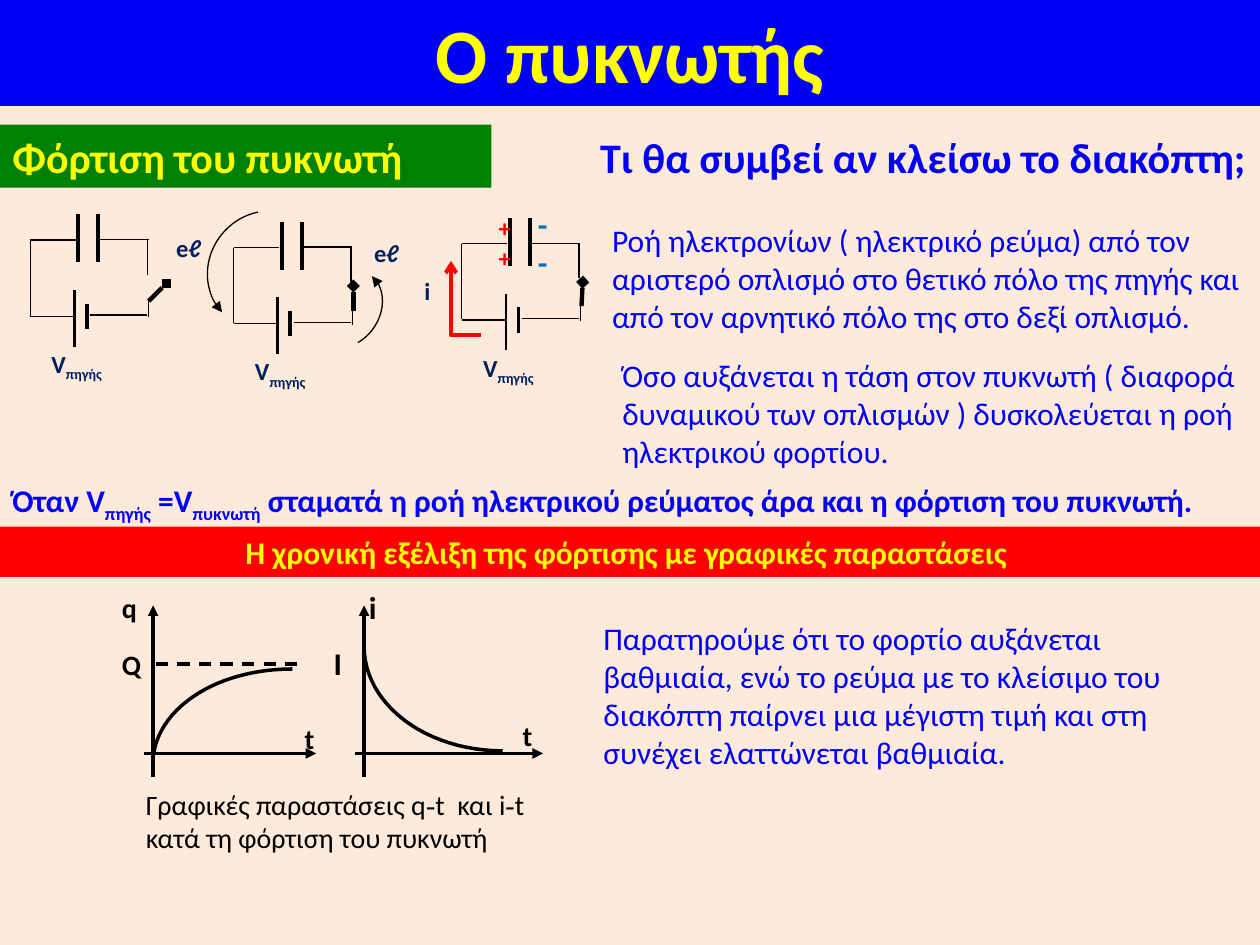
from lxml import etree
from pptx import Presentation
from pptx.dml.color import RGBColor
from pptx.enum.dml import MSO_LINE
from pptx.enum.shapes import MSO_CONNECTOR, MSO_SHAPE
from pptx.enum.text import MSO_ANCHOR, PP_ALIGN
from pptx.oxml.ns import qn
from pptx.util import Inches, Pt

DASH = MSO_LINE.DASH
STRAIGHT = MSO_CONNECTOR.STRAIGHT
RECTANGLE, ARC = MSO_SHAPE.RECTANGLE, MSO_SHAPE.ARC
TOP, MIDDLE = MSO_ANCHOR.TOP, MSO_ANCHOR.MIDDLE
LEFT, CENTER = PP_ALIGN.LEFT, PP_ALIGN.CENTER

BLUE, GREEN, RED, YELLOW = "0000FB", "008000", "FF0000", "FFFF00"
BLACK, NAVY, SKY, PEACH = "000000", "002060", "0070C0", "FDEADA"
COLUMNS, ROWS = 100, 75


def color(value):
    """Turn a hex string into a colour."""
    return RGBColor.from_string(value)


def bezier(start, first, second, end, steps=24):
    """Return points along a cubic curve."""
    points = []
    for step in range(steps + 1):
        t = step / steps
        weights = ((1 - t) ** 3, 3 * t * (1 - t) ** 2, 3 * t * t * (1 - t), t ** 3)
        points.append(tuple(
            sum(weight * value for weight, value in zip(weights, axis))
            for axis in zip(start, first, second, end)))
    return points


class Board:
    """Draw styled elements on a slide with a grid of 100 columns and 75 rows."""

    font = "Calibri"

    def __init__(self, deck, background):
        self.column = deck.slide_width / COLUMNS
        self.row = deck.slide_height / ROWS
        self.slide = deck.slides.add_slide(deck.slide_layouts[6])
        self.slide.background.fill.solid()
        self.slide.background.fill.fore_color.rgb = color(background)

    def place(self, *values):
        """Turn alternating columns and rows into lengths."""
        units = (self.column, self.row)
        return [round(value * units[i % 2]) for i, value in enumerate(values)]

    def fill_text(self, shape, text, size, ink, bold, align, anchor, marked):
        """Set text whose pieces between bars are subscript or in the marked font."""
        frame = shape.text_frame
        frame.word_wrap = True
        frame.vertical_anchor = anchor
        para = frame.paragraphs[0]
        para.alignment = align
        for index, piece in enumerate(text.split("|")):
            if not piece:
                continue
            span = para.add_run()
            span.text = piece
            span.font.name = self.font
            span.font.size = Pt(size)
            span.font.bold = bold
            span.font.color.rgb = color(ink)
            if index % 2 and marked:
                span.font.name = marked
            elif index % 2:
                span.font._element.set("baseline", "-25000")

    def text(self, at, text, size, ink, bold=True, align=LEFT, anchor=TOP, marked=None):
        """Add a wrapped text box."""
        box = self.slide.shapes.add_textbox(*self.place(*at))
        self.fill_text(box, text, size, ink, bold, align, anchor, marked)

    def banner(self, at, text, size, fill, align=CENTER):
        """Add a filled bar with yellow bold text."""
        box = self.slide.shapes.add_shape(RECTANGLE, *self.place(*at))
        box.shadow.inherit = False
        box.fill.solid()
        box.fill.fore_color.rgb = color(fill)
        box.line.fill.background()
        self.fill_text(box, text, size, YELLOW, True, align, MIDDLE, None)

    def stroke(self, shape, width, ink=BLACK, **ends):
        """Set the outline and its arrowheads."""
        shape.line.color.rgb = color(ink)
        shape.line.width = Pt(width)
        outline = shape._element.spPr.find(qn("a:ln"))
        for end, kind in ends.items():
            etree.SubElement(outline, qn(f"a:{end}End"), type=kind)

    def line(self, start, end, width, dash=None, **ends):
        """Add a straight line."""
        connector = self.slide.shapes.add_connector(STRAIGHT, *self.place(*start, *end))
        if dash:
            connector.line.dash_style = dash
        self.stroke(connector, width, **ends)
        etree.SubElement(connector._element.spPr, qn("a:effectLst"))

    def outline(self, points, width, ink=BLACK, **ends):
        """Add an open unfilled outline through the points."""
        first, *rest = [self.place(*point) for point in points]
        builder = self.slide.shapes.build_freeform(*first)
        builder.add_line_segments(rest, close=False)
        shape = builder.convert_to_shape()
        shape.shadow.inherit = False
        shape.fill.background()
        self.stroke(shape, width, ink, **ends)

    def arc(self, at, rotation, start=184.71, end=310):
        """Add a turned arc with an arrowhead at its start."""
        shape = self.slide.shapes.add_shape(ARC, *self.place(*at))
        shape.shadow.inherit = False
        shape.fill.background()
        shape.rotation = rotation
        for index, angle in enumerate((start, end)):
            shape.adjustments[index] = angle * 0.6
        self.stroke(shape, 0.75, head="triangle")

    def circuit(self, left, top, switch):
        """Add a capacitor, a source, their wires and a switch."""
        parts = (
            (2.25, ((3.8, 0, 3.8, 3.8), (5.4, 0, 5.4, 3.8), (4.5, 7.1, 4.5, 9.1))),
            (1.5, ((3.5, 6, 3.5, 10.5),)),
            (0.75, ((0, 2.05, 3.6, 2.05), (5.45, 2, 9.4, 2), (0, 2.05, 0, 8.05),
                    (9.3, 2, 9.3, 4.8), (0, 8.1, 3.5, 8.1), (4.75, 8, 9.3, 8),
                    (9.4, 6.9, 9.4, 8.2))),
        )
        for width, lines in parts:
            for x1, y1, x2, y2 in lines:
                self.line((left + x1, top + y1), (left + x2, top + y2), width)
        x1, y1, x2, y2 = switch
        self.line((left + x1, top + y1), (left + x2, top + y2), 2.5, tail="diamond")
        self.text((left + 0.7, top + 10.2, 8.8, 5.3), "V|πηγής|", 14, NAVY)

    def axes(self, origin, length):
        """Add a pair of arrowed axes crossing at the origin."""
        x, y = origin
        self.line((x - 0.7, y), (x + length, y), 2, tail="triangle")
        self.line((x, y + 1.9), (x, y - 11.75), 2, tail="triangle")


def main():
    """Build the slide and save it."""
    deck = Presentation()
    deck.slide_width, deck.slide_height = Inches(10), Inches(7.5)
    board = Board(deck, PEACH)

    board.banner((0, 0, 100, 8.4), "Ο πυκνωτής", 44, BLUE)
    board.banner((0, 9.9, 39, 5), "Φόρτιση του πυκνωτή", 24, GREEN, LEFT)
    board.text((46.5, 9.9, 53.5, 5), "Τι θα συμβεί αν κλείσω το διακόπτη; ",
               24, BLUE, align=CENTER, anchor=MIDDLE)

    board.circuit(2.4, 17, (9.4, 6.9, 10.8, 5.5))
    board.circuit(18.55, 17.6, (9.5, 7.1, 9.5, 5.1))
    board.circuit(36.65, 17.3, (9.5, 7, 9.6, 5.1))
    board.arc((16.3, 16.9, 9.7, 9.1), 311.8)
    board.arc((24.3, 21.9, 6.5, 5.2), 122.5)
    board.outline(((38.2, 26.6), (35.8, 26.6), (35.8, 20.7)), 2.25, RED, tail="arrow")
    for x, y, label in ((28.7, 18.4, "eℓ"), (13, 18, "eℓ"), (32.7, 21.4, "i")):
        board.text((x, y, 5.5, 5.3), label, 14, NAVY)
    for x, signs, size, ink in ((38.6, "++", 14, RED), (41.7, "--", 18, SKY)):
        board.text((x, 15.5, 2.4, 7.5), signs, size, ink, align=CENTER, anchor=MIDDLE)

    board.axes((12.15, 59.8), 12.95)
    board.axes((28.9, 59.8), 14.2)
    board.outline(bezier((12.2, 59.8), (12.8, 56), (17.4, 53.1), (23.2, 53.1)), 2)
    board.outline(bezier((39.9, 59.6), (33.8, 59.6), (28.9, 55.9), (28.9, 51.3)), 2)
    board.line((23.6, 52.7), (12.2, 52.7), 1.75, DASH)
    for x, y, label, size in ((8.7, 46.4, "q", 16), (8.7, 50.9, "Q", 16),
                              (23.2, 56.8, "t", 16), (40.5, 56.5, "t", 16),
                              (28.3, 46.2, "i", 18), (25.5, 50.6, "I", 18)):
        board.text((x, y, 4.4, 5.3), label, size, BLACK)
    board.text((10.6, 62, 35.5, 7),
               "Γραφικές παραστάσεις q|-|t  και i|-|t κατά τη φόρτιση του πυκνωτή",
               16, BLACK, False, marked="Times New Roman")

    for at, passage in (
        ((47.6, 17, 52.4, 10.1),
         "Ροή ηλεκτρονίων ( ηλεκτρικό ρεύμα) από τον αριστερό οπλισμό στο θετικό πόλο "
         "της πηγής και από τον αρνητικό πόλο της στο δεξί οπλισμό."),
        ((48.4, 27.7, 53.1, 10.1),
         "Όσο αυξάνεται η τάση στον πυκνωτή ( διαφορά δυναμικού των οπλισμών ) "
         "δυσκολεύεται η ροή ηλεκτρικού φορτίου."),
        ((46.9, 48.6, 51.2, 13.1),
         "Παρατηρούμε ότι το φορτίο αυξάνεται βαθμιαία, ενώ το ρεύμα με το κλείσιμο του "
         "διακόπτη παίρνει μια μέγιστη τιμή και στη συνέχει ελαττώνεται βαθμιαία."),
    ):
        board.text(at, passage, 18, BLUE, False, anchor=MIDDLE)
    board.text((0, 37.9, 100, 4), "Όταν V|πηγής| =V|πυκνωτή| σταματά η ροή ηλεκτρικού "
               "ρεύματος άρα και η φόρτιση του πυκνωτή.", 18, BLUE, anchor=MIDDLE)
    board.banner((0, 41.8, 100, 4),
                 "Η χρονική εξέλιξη της φόρτισης με γραφικές παραστάσεις ", 18, RED)
    deck.save("out.pptx")


if __name__ == "__main__":
    main()
